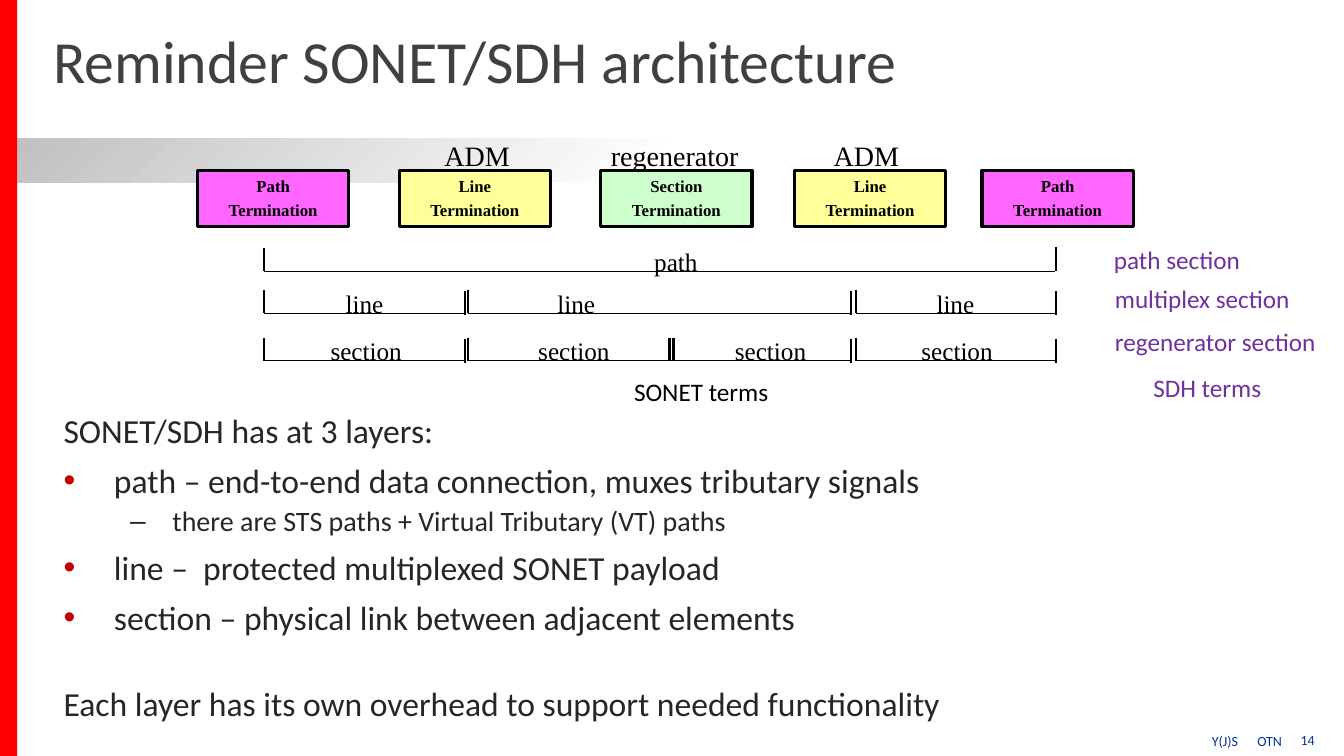
from dataclasses import dataclass

from lxml.etree import SubElement
from pptx import Presentation
from pptx.dml.color import RGBColor
from pptx.enum.shapes import MSO_CONNECTOR as Link, MSO_SHAPE as Form
from pptx.enum.text import MSO_ANCHOR as Anchor, MSO_AUTO_SIZE as Fit, PP_ALIGN as Align
from pptx.oxml.ns import qn
from pptx.util import Emu, Pt

SCALE = 9144  # EMU in one px, 100 px to the inch
BLACK = RGBColor(0x00, 0x00, 0x00)
WHITE = RGBColor(0xFF, 0xFF, 0xFF)
SILVER = RGBColor(0xBF, 0xBF, 0xBF)
RED = RGBColor(0xFF, 0x00, 0x00)
CRIMSON = RGBColor(0xC0, 0x00, 0x00)
NAVY = RGBColor(0x00, 0x33, 0x99)
PURPLE = RGBColor(0x70, 0x30, 0xA0)
DARK = RGBColor(0x26, 0x26, 0x26)
GREY = RGBColor(0x40, 0x40, 0x40)
PINK = RGBColor(0xFF, 0x66, 0xFF)
YELLOW = RGBColor(0xFF, 0xFF, 0x99)
GREEN = RGBColor(0xCC, 0xFF, 0xCC)
SANS, SERIF = "Calibri", "Times New Roman"


@dataclass
class Label:
    text: str
    left: int
    top: int
    width: int
    height: int = 40
    size: float = 18
    face: str = SERIF
    color: RGBColor = BLACK
    inset: tuple[int, int] = (10, 5)


@dataclass
class Node:
    name: str
    left: int
    color: RGBColor


@dataclass
class Row:
    """Brackets that share one base line, with extra upright ticks."""
    base: int
    spans: list[tuple[int, int]]
    ticks: tuple[int, ...] = ()
    drop: int = 2


@dataclass
class Item:
    text: str
    mark: str = ""
    size: int = 24
    level: int = 0
    left: int = 50
    hang: int = 50
    space: int = 4
    pitch: float = 1.1


THIRDS = [(262, 461), (464, 844), (849, 1047)]
ROWS = [
    Row(269, [(262, 1047)], drop=0),
    Row(311, THIRDS),
    Row(358, THIRDS, (664, 668)),
]
NODES = [
    Node("Path", 196, PINK), Node("Line", 396, YELLOW), Node("Section", 596, GREEN),
    Node("Line", 788, YELLOW), Node("Path", 974, PINK),
]
LABELS = [
    Label("ADM", 431, 133, 93, 43, 20),
    Label("regenerator", 596, 132, 158, 43, 20),
    Label("ADM", 817, 133, 93, 43, 20),
    Label("path", 639, 239, 81),
    *[Label("line", x, 281, 72) for x in (333, 543, 919)],
    *[Label("section", x, 328, 114) for x in (318, 524, 719, 904)],
    Label("path section", 1095, 237, 178, face=SANS, color=PURPLE),
    Label("multiplex section", 1096, 276, 196, face=SANS, color=PURPLE),
    Label("regenerator section", 1096, 319, 226, face=SANS, color=PURPLE),
    Label("SDH terms", 1134, 364, 139, face=SANS, color=PURPLE),
    Label("SONET terms", 619, 368, 170, face=SANS),
    Label("14", 1277, 719, 55, 30, 10, SANS, NAVY, (13, 7)),
    Label("Y(J)S\tOTN", 1189, 720, 122, 30, 10, SANS, NAVY, (13, 7)),
]
ITEMS = [
    Item("SONET/SDH has at 3 layers:", space=0),
    Item("path – end-to-end data connection, muxes tributary signals", "•"),
    Item("there are STS paths + Virtual Tributary (VT) paths", "–", 20, 1, 108, 42, 0),
    Item("line –  protected multiplexed SONET payload", "•"),
    Item("section – physical link between adjacent elements", "•"),
    Item("Each layer has its own overhead to support needed functionality", pitch=2.0),
]


def px(*vals: int) -> list[Emu]:
    return [Emu(val * SCALE) for val in vals]


def style(obj, **form) -> None:
    for name, val in form.items():
        setattr(obj, name, val)


def ink(para, face: str, size: float, color: RGBColor, bold: bool = False) -> None:
    style(para.font, name=face, size=Pt(size), bold=bold)
    para.font.color.rgb = color


def frame(shape, inset: tuple[int, int] = (10, 5), anchor=Anchor.TOP):
    side, end = px(*inset)
    body = shape.text_frame
    style(body, word_wrap=True, auto_size=Fit.NONE, vertical_anchor=anchor,
          margin_left=side, margin_right=side, margin_top=end, margin_bottom=end)
    return body


def place(shape, left: int, top: int, width: int, height: int) -> None:
    style(shape, **dict(zip(("left", "top", "width", "height"), px(left, top, width, height))))


def box(slide, left: int, top: int, width: int, height: int):
    shape = slide.shapes.add_shape(Form.RECTANGLE, *px(left, top, width, height))
    shape.shadow.inherit = False
    shape.line.fill.background()
    return shape


def paint(shape, color: RGBColor) -> None:
    shape.fill.solid()
    shape.fill.fore_color.rgb = color


def rule(slide, x1: int, y1: int, x2: int, y2: int, width: float) -> None:
    line = slide.shapes.add_connector(Link.STRAIGHT, *px(x1, y1, x2, y2))
    style(line.line, width=Pt(width))
    line.line.color.rgb = BLACK
    SubElement(line._element.spPr, qn("a:effectLst"))


def decor(slide) -> None:
    band = box(slide, 0, 137, 1333, 44)
    band.fill.gradient()
    band.fill.gradient_angle = 315
    for stop, color, pos in zip(band.fill.gradient_stops, (SILVER, WHITE), (0, 0.5)):
        stop.color.rgb = color
        stop.position = pos
    paint(box(slide, 0, 0, 17, 750), RED)


def head(shape) -> None:
    place(shape, 53, 22, 1009, 86)
    para = frame(shape, (0, 0), Anchor.MIDDLE).paragraphs[0]
    para.text = "Reminder SONET/SDH architecture"
    style(para, alignment=Align.LEFT, line_spacing=0.85)
    ink(para, SANS, 42.7, GREY)


def bullet(para, item: Item) -> None:
    props = para._p.get_or_add_pPr()
    left, hang = px(item.left, item.hang)
    props.set("marL", str(left))
    props.set("indent", str(-hang))
    if not item.mark:
        SubElement(props, qn("a:buNone"))
        return
    tint = SubElement(props, qn("a:buClr"))
    SubElement(tint, qn("a:srgbClr"), val=str(DARK if item.level else CRIMSON))
    SubElement(props, qn("a:buChar"), char=item.mark)


def layers(shape) -> None:
    place(shape, 53, 398, 1231, 254)
    body = frame(shape)
    for num, item in enumerate(ITEMS):
        para = body.add_paragraph() if num else body.paragraphs[0]
        para.text = item.text
        bullet(para, item)
        style(para, level=item.level, alignment=Align.LEFT,
              line_spacing=item.pitch, space_before=Pt(item.space))
        ink(para, SANS, item.size, DARK)


def node(slide, item: Node) -> None:
    shape = box(slide, item.left, 169, 150, 56)
    paint(shape, item.color)
    shape.line.color.rgb = BLACK
    shape.line.width = Pt(2.25)
    body = frame(shape)
    body.text = f"{item.name}\nTermination"
    for num, para in enumerate(body.paragraphs):
        style(para, alignment=Align.CENTER, space_before=Pt(3 * num))
        ink(para, SERIF, 12, BLACK, True)


def row(slide, item: Row) -> None:
    base, drop = item.base, item.drop
    for left, right in item.spans:
        rule(slide, left, base, right - 1, base, 0.75)
        rule(slide, left, base - 23, left, base, 1.5)
        rule(slide, right, base - 24 + drop, right, base + drop, 1.5)
    for tick in item.ticks:
        rule(slide, tick, base - 23, tick, base, 1.5)


def label(slide, item: Label) -> None:
    shape = slide.shapes.add_textbox(*px(item.left, item.top, item.width, item.height))
    para = frame(shape, item.inset).paragraphs[0]
    para.text = item.text
    if "\t" in item.text:
        tabs = SubElement(para._p.get_or_add_pPr(), qn("a:tabLst"))
        SubElement(tabs, qn("a:tab"), pos=str(px(45)[0]), algn="l")
    ink(para, item.face, item.size, item.color)


def main() -> None:
    deck = Presentation()
    deck.slide_width, deck.slide_height = px(1333, 750)
    slide = deck.slides.add_slide(deck.slide_layouts[1])
    decor(slide)
    head(slide.shapes.title)
    layers(slide.placeholders[1])
    for draw, items in ((node, NODES), (row, ROWS), (label, LABELS)):
        for item in items:
            draw(slide, item)
    deck.save("out.pptx")


if __name__ == "__main__":
    main()
